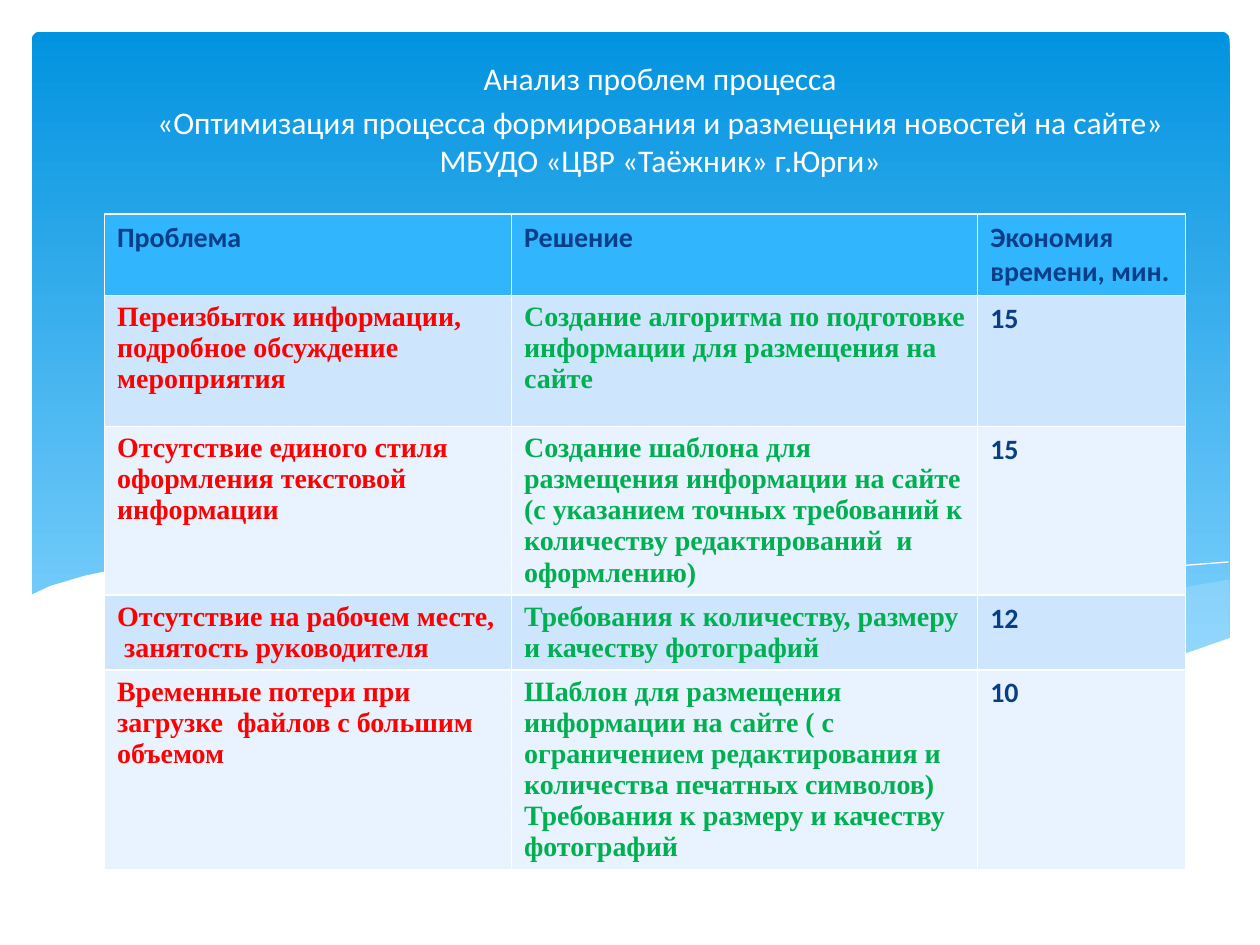
from lxml import etree
from pptx import Presentation
from pptx.dml.color import RGBColor
from pptx.enum.shapes import MSO_SHAPE
from pptx.enum.text import MSO_ANCHOR, MSO_AUTO_SIZE, PP_ALIGN
from pptx.oxml.ns import qn
from pptx.util import Inches, Pt

ROUNDED = MSO_SHAPE.ROUNDED_RECTANGLE
BOTTOM, TOP = MSO_ANCHOR.BOTTOM, MSO_ANCHOR.TOP
NO_AUTOFIT = MSO_AUTO_SIZE.NONE
CENTER, LEFT = PP_ALIGN.CENTER, PP_ALIGN.LEFT
TITLE_ONLY = 5

WHITE = RGBColor(0xFF, 0xFF, 0xFF)
SKY_TOP = RGBColor(0x02, 0x93, 0xE0)
SKY_BOTTOM = RGBColor(0x83, 0xD3, 0xFE)
WAVE_BLUE = RGBColor(0xC6, 0xE7, 0xFC)
HEADER_BLUE = RGBColor(0x31, 0xB6, 0xFD)
BAND_DARK = RGBColor(0xCE, 0xE5, 0xFE)
BAND_LIGHT = RGBColor(0xE8, 0xF3, 0xFF)
NAVY = RGBColor(0x07, 0x3E, 0x87)
RED = RGBColor(0xFF, 0x00, 0x00)
GREEN = RGBColor(0x00, 0xB0, 0x50)

SANS, SERIF = "Calibri", "Times New Roman"

SKY_BOX = (0.25, 0.25, 9.51, 5.18)
WAVES_BOX = (0.23, 4.44, 9.54, 1.45)
HEADING_BOX = (0.91, 0.44, 8.66, 1.03)
TABLE_BOX = (0.83, 1.7, 8.58, 5.19)
COLUMN_WIDTHS = (3.23, 3.7, 1.65)
ROW_HEIGHTS = (0.64, 1.04, 1.34, 0.59, 1.58)

RIGHT_WAVE = [
    (9.52, 0.16), (9.12, 0.23), (8.38, 0.39), (7.56, 0.59), (6.83, 0.74),
    (6.38, 0.81), (6.82, 0.87), (7.34, 0.92), (7.91, 0.94), (8.49, 0.9),
    (8.98, 0.82), (9.53, 0.63), (9.53, 0.16),
]
LONG_WAVE = [
    (8.7, 0.89), (7.84, 0.76), (6.83, 0.56), (6.06, 0.38), (5.32, 0.21),
    (4.66, 0.1), (3.97, 0.03), (3.38, 0.02), (2.63, 0.08), (3.39, 0.19),
    (4.26, 0.38), (5.07, 0.57), (5.78, 0.71), (6.57, 0.84), (7.25, 0.92),
    (7.84, 0.95), (8.34, 0.93),
]
FALLING_CREST = [
    (2.86, 0.12), (3.21, 0.06), (3.78, 0.03), (4.46, 0.05), (5.33, 0.13),
    (6.13, 0.24), (7.04, 0.42), (8.08, 0.67), (8.84, 0.88),
]
RISING_CREST = [
    (5.9, 0.73), (6.72, 0.52), (7.53, 0.33), (8.43, 0.15), (9.01, 0.06),
    (9.52, 0.02),
]
FOREGROUND = [
    (9.54, 0.62), (9.17, 0.75), (8.64, 0.87), (8.14, 0.92), (7.55, 0.92),
    (6.85, 0.86), (6.03, 0.75), (5.06, 0.55), (4.24, 0.36), (3.42, 0.18),
    (2.69, 0.07), (2.07, 0.01), (1.54, 0), (1.09, 0.02), (0.72, 0.07),
    (0.44, 0.13), (0.17, 0.21), (0, 0.29), (0, 1.45), (9.54, 1.45),
]

HEADING = [
    "Анализ проблем процесса",
    "«Оптимизация процесса формирования и размещения новостей на сайте»\v"
    "МБУДО «ЦВР «Таёжник» г.Юрги»",
]
PROBLEMS = [
    ("Проблема", "Решение", "Экономия  времени, мин."),
    ("Переизбыток информации, подробное обсуждение мероприятия",
     "Создание алгоритма по подготовке информации для размещения на сайте",
     "15"),
    ("Отсутствие единого стиля оформления текстовой информации",
     "Создание шаблона для размещения информации на сайте (с указанием "
     "точных требований к количеству редактирований  и оформлению)",
     "15"),
    ("Отсутствие на рабочем месте,  занятость руководителя",
     "Требования к количеству, размеру и качеству фотографий",
     "12"),
    ("Временные потери при загрузке  файлов с большим объемом",
     "Шаблон для размещения информации на сайте ( с ограничением "
     "редактирования и количества печатных символов)\n"
     "Требования к размеру и качеству фотографий",
     "10"),
]
BODY_STYLES = ((SERIF, RED), (SERIF, GREEN), (SANS, NAVY))


def inches(box):
    """Turn a box of grid units into lengths."""
    return [Inches(length) for length in box]


def format_text(text_frame, font_name, size, color, bold, align):
    """Apply one style to every paragraph and run of a text frame."""
    for paragraph in text_frame.paragraphs:
        paragraph.alignment = align
        for run in paragraph.runs:
            run.font.name = font_name
            run.font.size = Pt(size)
            run.font.bold = bold
            run.font.color.rgb = color


def add_sky(slide, box):
    """Draw the gradient panel behind the heading and table."""
    sky = slide.shapes.add_shape(ROUNDED, *inches(box))
    sky.shadow.inherit = False
    sky.adjustments[0] = 0.013
    sky.line.fill.background()
    sky.fill.gradient()
    sky.fill.gradient_angle = 270
    for stop, position, color in zip(
        sky.fill.gradient_stops, (0, 1), (SKY_TOP, SKY_BOTTOM)
    ):
        stop.position = position
        stop.color.rgb = color


def add_curve(slide, box, points, closed):
    """Draw an outline through points measured from the corner of a box."""
    left, top = inches(box[:2])
    start, *rest = [inches(point) for point in points]
    builder = slide.shapes.build_freeform(*start)
    builder.add_line_segments(rest, close=closed)
    curve = builder.convert_to_shape(left, top)
    curve.shadow.inherit = False
    return curve


def add_waves(slide, box):
    """Layer the translucent waves, their crests and the white foreground."""
    for points, color, opacity in (
        (RIGHT_WAVE, WAVE_BLUE, 29),
        (LONG_WAVE, WAVE_BLUE, 40),
    ):
        wave = add_curve(slide, box, points, True)
        wave.line.fill.background()
        wave.fill.solid()
        wave.fill.fore_color.rgb = color
        tint = wave.fill._xPr.find(".//" + qn("a:srgbClr"))
        etree.SubElement(tint, qn("a:alpha"), val=str(opacity * 1000))
    for points in (FALLING_CREST, RISING_CREST):
        crest = add_curve(slide, box, points, False)
        crest.fill.background()
        crest.line.color.rgb = WHITE
        crest.line.width = Pt(0)
    foreground = add_curve(slide, box, FOREGROUND, True)
    foreground.line.fill.background()
    foreground.fill.solid()
    foreground.fill.fore_color.rgb = WHITE


def add_heading(slide, box):
    """Place the heading in the title placeholder."""
    heading = slide.shapes.title
    heading.left, heading.top, heading.width, heading.height = inches(box)
    frame = heading.text_frame
    frame.text = "\n".join(HEADING)
    frame.word_wrap = True
    frame.auto_size = NO_AUTOFIT
    frame.vertical_anchor = BOTTOM
    format_text(frame, SANS, 18, WHITE, False, CENTER)
    for paragraph in frame.paragraphs:
        paragraph.space_before = Pt(3.6)


def add_problem_table(slide, box):
    """Fill the table of problems, solutions and minutes saved."""
    table = slide.shapes.add_table(
        len(PROBLEMS), len(COLUMN_WIDTHS), *inches(box)
    ).table
    for column, width in zip(table.columns, COLUMN_WIDTHS):
        column.width = Inches(width)
    for row, height in zip(table.rows, ROW_HEIGHTS):
        row.height = Inches(height)
    for r, entries in enumerate(PROBLEMS):
        band = BAND_DARK if r % 2 else BAND_LIGHT
        for c, entry in enumerate(entries):
            cell = table.cell(r, c)
            cell.text_frame.text = entry
            cell.vertical_anchor = TOP
            cell.fill.solid()
            cell.fill.fore_color.rgb = band if r else HEADER_BLUE
            font_name, color = BODY_STYLES[c] if r else (SANS, NAVY)
            format_text(cell.text_frame, font_name, 16, color, True, LEFT)


def main():
    """Build and save the slide."""
    presentation = Presentation()
    presentation.slide_width = Inches(10)
    presentation.slide_height = Inches(7.5)
    slide = presentation.slides.add_slide(
        presentation.slide_layouts[TITLE_ONLY]
    )
    add_sky(slide, SKY_BOX)
    add_waves(slide, WAVES_BOX)
    add_heading(slide, HEADING_BOX)
    title = slide.shapes.title._element
    title.getparent().append(title)
    add_problem_table(slide, TABLE_BOX)
    presentation.save("out.pptx")


if __name__ == "__main__":
    main()
